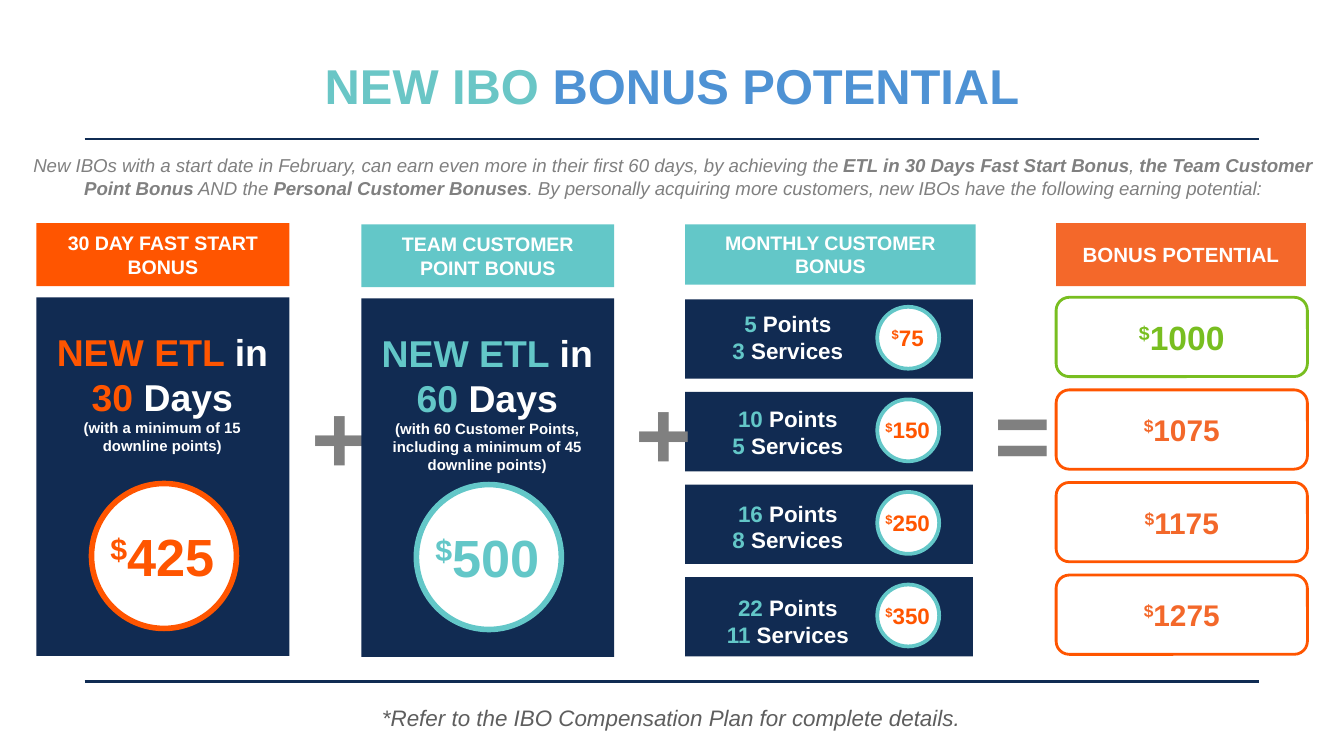
from dataclasses import dataclass

from lxml import etree
from pptx import Presentation
from pptx.dml.color import RGBColor
from pptx.enum.shapes import MSO_CONNECTOR, MSO_SHAPE
from pptx.enum.text import MSO_ANCHOR, PP_ALIGN
from pptx.oxml.ns import qn
from pptx.util import Cm, Pt

RECTANGLE = MSO_SHAPE.RECTANGLE
ROUNDED = MSO_SHAPE.ROUNDED_RECTANGLE
OVAL = MSO_SHAPE.OVAL
STRAIGHT = MSO_CONNECTOR.STRAIGHT
TOP, MIDDLE = MSO_ANCHOR.TOP, MSO_ANCHOR.MIDDLE
LEFT, CENTER = PP_ALIGN.LEFT, PP_ALIGN.CENTER


@dataclass(frozen=True)
class Theme:
    font: str = "Arial"
    white: str = "FFFFFF"
    navy: str = "112B52"
    rule: str = "102C53"
    orange: str = "FF5500"
    soft_orange: str = "F4682A"
    total: str = "F3682A"
    teal: str = "63C7C8"
    title_teal: str = "6AC6C6"
    title_blue: str = "4E92D4"
    green: str = "78BE20"
    gray: str = "808080"
    note: str = "5E5E5E"
    title_size: float = 26.2
    operator_size: float = 52
    amount_size: float = 28
    goal_size: float = 20
    best_total_size: float = 18
    total_size: float = 16
    row_size: float = 12
    result_header_size: float = 11
    header_size: float = 10.5
    intro_size: float = 10
    small_size: float = 8


THEME = Theme()
ROW_STEP, ROW_HEIGHT = 1.75, 1.5


def style_run(run, size, color, bold=True, italic=False):
    font = run.font
    font.name, font.size = THEME.font, Pt(size)
    font.bold, font.italic = bold, italic
    font.color.rgb = RGBColor.from_string(color)


def write(shape, paragraphs, anchor=TOP, align=CENTER):
    """Each paragraph is a list of (text, size, color, further run styles)."""
    frame = shape.text_frame
    frame.word_wrap = True
    frame.vertical_anchor = anchor
    for index, spans in enumerate(paragraphs):
        paragraph = frame.add_paragraph() if index else frame.paragraphs[0]
        paragraph.alignment = align
        for text, *style in spans:
            run = paragraph.add_run()
            run.text = text
            style_run(run, *style)
    return frame


def write_amount(shape, amount, size, color, anchor=TOP):
    frame = write(shape, [[("$", size, color), (amount, size, color)]], anchor)
    dollar = frame.paragraphs[0].runs[0]
    dollar._r.get_or_add_rPr().set("baseline", "30000")


def add_box(shapes, kind, box, fill=None, line=None, width=0):
    shape = shapes.add_shape(kind, *map(Cm, box))
    shape.shadow.inherit = False
    if fill:
        shape.fill.solid()
        shape.fill.fore_color.rgb = RGBColor.from_string(fill)
    else:
        shape.fill.background()
    if line:
        shape.line.color.rgb = RGBColor.from_string(line)
        shape.line.width = Pt(width)
    else:
        shape.line.fill.background()
    return shape


def add_text(shapes, box, paragraphs, **layout):
    shape = shapes.add_textbox(*map(Cm, box))
    return write(shape, paragraphs, **layout)


def add_header(slide, box, text, fill, size=THEME.header_size):
    shape = add_box(slide.shapes, RECTANGLE, box, fill)
    frame = shape.text_frame
    frame.word_wrap = True
    frame.vertical_anchor = MIDDLE
    frame.text = text
    frame.paragraphs[0].alignment = CENTER
    for run in frame.paragraphs[0].runs:
        style_run(run, size, THEME.white)


def add_badge(slide, circle, text_box, amount, size, color, line, width):
    shapes = slide.shapes.add_group_shape().shapes
    add_box(shapes, OVAL, circle, THEME.white, line, width)
    write_amount(shapes.add_textbox(*map(Cm, text_box)), amount, size, color)


def add_rule(slide, top, width):
    rule = slide.shapes.add_connector(STRAIGHT, Cm(1.6), Cm(top), Cm(23.8), Cm(top))
    rule.line.color.rgb = RGBColor.from_string(THEME.rule)
    rule.line.width = Pt(width)
    etree.SubElement(rule._element.spPr, qn("a:effectLst"))


def add_operator(slide, left, top, symbol):
    add_text(slide.shapes, (left, top, 1.1, 2.49),
             [[(symbol, THEME.operator_size, THEME.gray)]])


def add_title(slide, box):
    title = slide.shapes.title
    title.left, title.top, title.width, title.height = map(Cm, box)
    frame = write(title, [[("NEW IBO", THEME.title_size, THEME.title_teal),
                           (" BONUS POTENTIAL", THEME.title_size, THEME.title_blue)]],
                  MIDDLE)
    frame.paragraphs[0].line_spacing = 0.9


def add_intro(slide, box):
    parts = [
        "New IBOs with a start date in February, can earn even more in their "
        "first 60 days, by achieving the ",
        "ETL in 30 Days Fast Start Bonus",
        ", ",
        "the Team Customer Point Bonus",
        " AND the ",
        "Personal Customer Bonuses",
        ". By personally acquiring more customers, new IBOs have the following "
        "earning potential:",
    ]
    # Every second part is emphasised
    spans = [(text, THEME.intro_size, THEME.gray, index % 2 == 1, True)
             for index, text in enumerate(parts)]
    add_text(slide.shapes, box, [spans])


def add_goal_column(slide, left, top, header, days, condition, amount, color):
    width = 4.78
    add_header(slide, (left, top, width, 1.19), header, color)
    add_box(slide.shapes, RECTANGLE, (left, top + 1.4, width, 6.78), THEME.navy)
    add_badge(slide, (left + 1.04, top + 4.92, 2.74, 2.74),
              (left - 0.26, top + 5.56, 5.28, 1.45),
              amount, THEME.amount_size, color, color, 3)
    size = THEME.goal_size
    add_text(slide.shapes, (left + 0.03, top + 1.88, 4.7, 3.5), [
        [("NEW ETL ", size, color), ("in ", size, THEME.white),
         (days, size, color), (" Days", size, THEME.white)],
        [(condition, THEME.small_size, THEME.white)],
    ])


def add_monthly_column(slide, left, top, rows):
    add_header(slide, (left, top, 5.49, 1.14), "MONTHLY CUSTOMER\vBONUS", THEME.teal)
    size = THEME.row_size
    for index, (points, services, amount) in enumerate(rows):
        row_top = top + 1.42 + index * ROW_STEP
        add_box(slide.shapes, RECTANGLE, (left, row_top, 5.44, ROW_HEIGHT), THEME.navy)
        add_text(slide.shapes, (left + 0.25, row_top + 0.08 + index * 0.04, 3.38, 1.27),
                 [[(number + " ", size, THEME.teal), (unit, size, THEME.white)]
                  for number, unit in ((points, "Points"), (services, "Services"))])
        add_badge(slide, (left + 3.63, row_top + 0.14, 1.17, 1.17),
                  (left + 3.38, row_top + 0.34, 1.65, 0.76),
                  amount, size, THEME.orange, THEME.teal, 2)


def add_potential_column(slide, left, top, totals):
    add_header(slide, (left, top, 4.72, 1.19), "BONUS POTENTIAL",
               THEME.soft_orange, THEME.result_header_size)
    for index, total in enumerate(totals):
        # The first total stands out
        if index == 0:
            fill, line, color, size = None, THEME.green, THEME.green, THEME.best_total_size
        else:
            fill, line, color, size = THEME.white, THEME.orange, THEME.total, THEME.total_size
        box = (left, top + 1.4 + index * ROW_STEP, 4.75, ROW_HEIGHT)
        shape = add_box(slide.shapes, ROUNDED, box, fill, line, 1.5)
        write_amount(shape, total, size, color, MIDDLE)


def add_footnote(slide, box):
    frame = add_text(slide.shapes, box, [[
        ("*Refer to the IBO Compensation Plan for complete details.",
         THEME.row_size, THEME.note, False, True)]], anchor=MIDDLE, align=LEFT)
    frame.word_wrap = False
    frame.margin_left = frame.margin_right = Cm(0.08)
    frame.margin_top = frame.margin_bottom = Cm(0.08)


def main():
    presentation = Presentation()
    presentation.slide_width, presentation.slide_height = Cm(25.4), Cm(14.29)
    slide = presentation.slides.add_slide(presentation.slide_layouts[5])

    # Heading
    add_rule(slide, 2.62, 1)
    add_title(slide, (1.75, 0.76, 21.9, 1.85))
    add_intro(slide, (0.36, 2.79, 24.71, 1.12))

    # Bonus columns, joined as a sum
    add_goal_column(slide, 0.69, 4.22, "30 DAY FAST START BONUS", "30",
                    "(with a minimum of 15 downline points)", "425", THEME.orange)
    add_operator(slide, 5.64, 6.99, "+")
    add_goal_column(slide, 6.83, 4.24, "TEAM CUSTOMER POINT BONUS", "60",
                    "(with 60 Customer Points, including a minimum of 45 downline points)",
                    "500", THEME.teal)
    add_monthly_column(slide, 12.95, 4.24, [
        ("5", "3", "75"), ("10", "5", "150"), ("16", "8", "250"), ("22", "11", "350")])
    add_operator(slide, 11.76, 6.91, "+")
    add_operator(slide, 18.54, 6.93, "=")
    add_potential_column(slide, 19.96, 4.22, ["1000", "1075", "1175", "1275"])

    # Footer
    add_footnote(slide, (7.14, 13.23, 11.33, 0.66))
    add_rule(slide, 12.88, 2)
    presentation.save("out.pptx")


if __name__ == "__main__":
    main()
